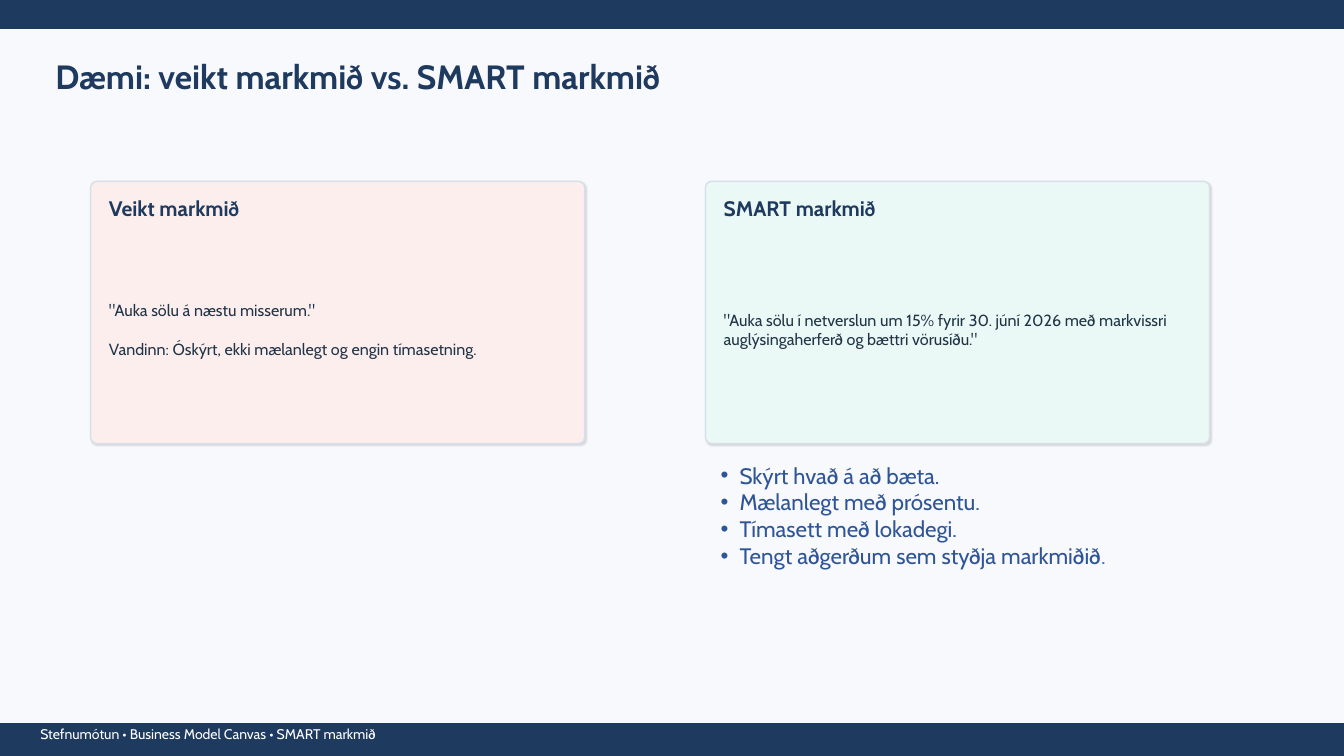
from lxml.etree import SubElement
from pptx import Presentation
from pptx.dml.color import RGBColor
from pptx.enum.shapes import MSO_SHAPE
from pptx.enum.text import MSO_ANCHOR, MSO_AUTO_SIZE, PP_ALIGN
from pptx.oxml.ns import qn
from pptx.util import Pt

TITLE = "Dæmi: veikt markmið vs. SMART markmið"
FOOTER = "Stefnumótun • Business Model Canvas • SMART markmið"
CARDS = [
    {
        "left": 64.8, "width": 352.8, "fill": "FDEEEE",
        "heading": "Veikt markmið",
        "body": [
            '"Auka sölu á næstu misserum."',
            "Vandinn: Óskýrt, ekki mælanlegt og engin tímasetning.",
        ],
    },
    {
        "left": 504, "width": 360, "fill": "EAF8F6",
        "heading": "SMART markmið",
        "body": [
            '"Auka sölu í netverslun um 15% fyrir 30. júní 2026 með markvissri '
            'auglýsingaherferð og bættri vörusíðu."',
        ],
    },
]
BULLETS = [
    "Skýrt hvað á að bæta.",
    "Mælanlegt með prósentu.",
    "Tímasett með lokadegi.",
    "Tengt aðgerðum sem styðja markmiðið",
]
FINAL_STOP = "."

FONT = "Cabin"
NAVY = "1F3A5F"
SLIDE_WIDTH, SLIDE_HEIGHT = 960, 540
TOP_BAR_HEIGHT, BOTTOM_BAR_HEIGHT = 20.16, 23.04
CARD_TOP, CARD_HEIGHT, CARD_PADDING = 129.6, 187.2, 12.96
BULLET_INDENT = 13.5


def color(value):
    return RGBColor.from_string(value)


def place(shape, left, top, width, height):
    shape.left, shape.top = Pt(left), Pt(top)
    shape.width, shape.height = Pt(width), Pt(height)


def write(shape, lines, size, ink, bold=False, anchor=MSO_ANCHOR.MIDDLE,
          inset=0, gap=0, bullet=False):
    frame = shape.text_frame
    frame.word_wrap = True
    frame.auto_size = MSO_AUTO_SIZE.NONE
    frame.vertical_anchor = anchor
    frame.margin_left = frame.margin_right = Pt(inset)
    frame.margin_top = frame.margin_bottom = Pt(inset)
    for index, line in enumerate(lines):
        paragraph = frame.add_paragraph() if index else frame.paragraphs[0]
        paragraph.add_run().text = line
        if bullet:
            properties = paragraph._p.get_or_add_pPr()
            properties.set("marL", str(Pt(BULLET_INDENT)))
            properties.set("indent", str(-Pt(BULLET_INDENT)))
            SubElement(properties, qn("a:buChar"), char="•")
        paragraph.alignment = PP_ALIGN.LEFT
        paragraph.space_before = Pt(gap if index else 0)
        paragraph.font.name = FONT
        paragraph.font.size = Pt(size)
        for run in paragraph.runs:
            run.font.name = FONT
            run.font.size = Pt(size)
            run.font.bold = bold
            run.font.color.rgb = color(ink)
    return frame


def add_box(slide, kind, bounds, fill, line):
    shape = slide.shapes.add_shape(kind, *map(Pt, bounds))
    shape.shadow.inherit = False
    shape.fill.solid()
    shape.fill.fore_color.rgb = color(fill)
    shape.line.color.rgb = color(line)
    shape.line.width = Pt(1)
    return shape


def add_text(slide, bounds, lines, **style):
    write(slide.shapes.add_textbox(*map(Pt, bounds)), lines, **style)


def add_shadow(shape):
    effects = shape._element.spPr.find(qn("a:effectLst"))
    shadow = SubElement(effects, qn("a:outerShdw"), blurRad=str(Pt(1)),
                        dist=str(Pt(1)), dir="2700000", algn="tl",
                        rotWithShape="0")
    tint = SubElement(shadow, qn("a:srgbClr"), val="000000")
    SubElement(tint, qn("a:alpha"), val="12000")


def add_card(slide, card):
    left, width = card["left"], card["width"]
    box = add_box(slide, MSO_SHAPE.ROUNDED_RECTANGLE,
                  (left, CARD_TOP, width, CARD_HEIGHT), card["fill"], "D7E0EA")
    box.adjustments[0] = 0.023
    add_shadow(box)
    text_left, text_width = left + CARD_PADDING, width - 2 * CARD_PADDING
    add_text(slide, (text_left, CARD_TOP + 10.08, text_width, 17.28),
             [card["heading"]], size=15, ink=NAVY, bold=True)
    add_text(slide, (text_left, CARD_TOP + 32.4, text_width, 146.88),
             card["body"], size=11.5, ink="213547", gap=14)


def main():
    presentation = Presentation()
    presentation.slide_width = Pt(SLIDE_WIDTH)
    presentation.slide_height = Pt(SLIDE_HEIGHT)
    slide = presentation.slides.add_slide(presentation.slide_layouts[1])
    slide.background.fill.solid()
    slide.background.fill.fore_color.rgb = color("F7F9FC")

    bottom_bar_top = SLIDE_HEIGHT - BOTTOM_BAR_HEIGHT
    for top, height in ((0, TOP_BAR_HEIGHT), (bottom_bar_top, BOTTOM_BAR_HEIGHT)):
        add_box(slide, MSO_SHAPE.RECTANGLE, (0, top, SLIDE_WIDTH, height), NAVY, NAVY)
    add_text(slide, (28.8, bottom_bar_top + 1.44, 612, 11.52), [FOOTER],
             size=10, ink="FFFFFF")

    title = slide.shapes.title
    place(title, 39.6, 36, 633.6, 36)
    write(title, [TITLE], size=24, ink=NAVY, bold=True)

    for card in CARDS:
        add_card(slide, card)

    body = slide.placeholders[1]
    place(body, 512.64, 327.6, 342, 93.6)
    frame = write(body, BULLETS, size=16, ink="2F5597", anchor=MSO_ANCHOR.TOP,
                  inset=2.16, bullet=True)
    stop = frame.paragraphs[-1].add_run()
    stop.text = FINAL_STOP
    stop.font.name = FONT
    stop.font.size = Pt(16)
    stop.font.color.rgb = color("4472C4")

    presentation.save("out.pptx")


if __name__ == "__main__":
    main()
